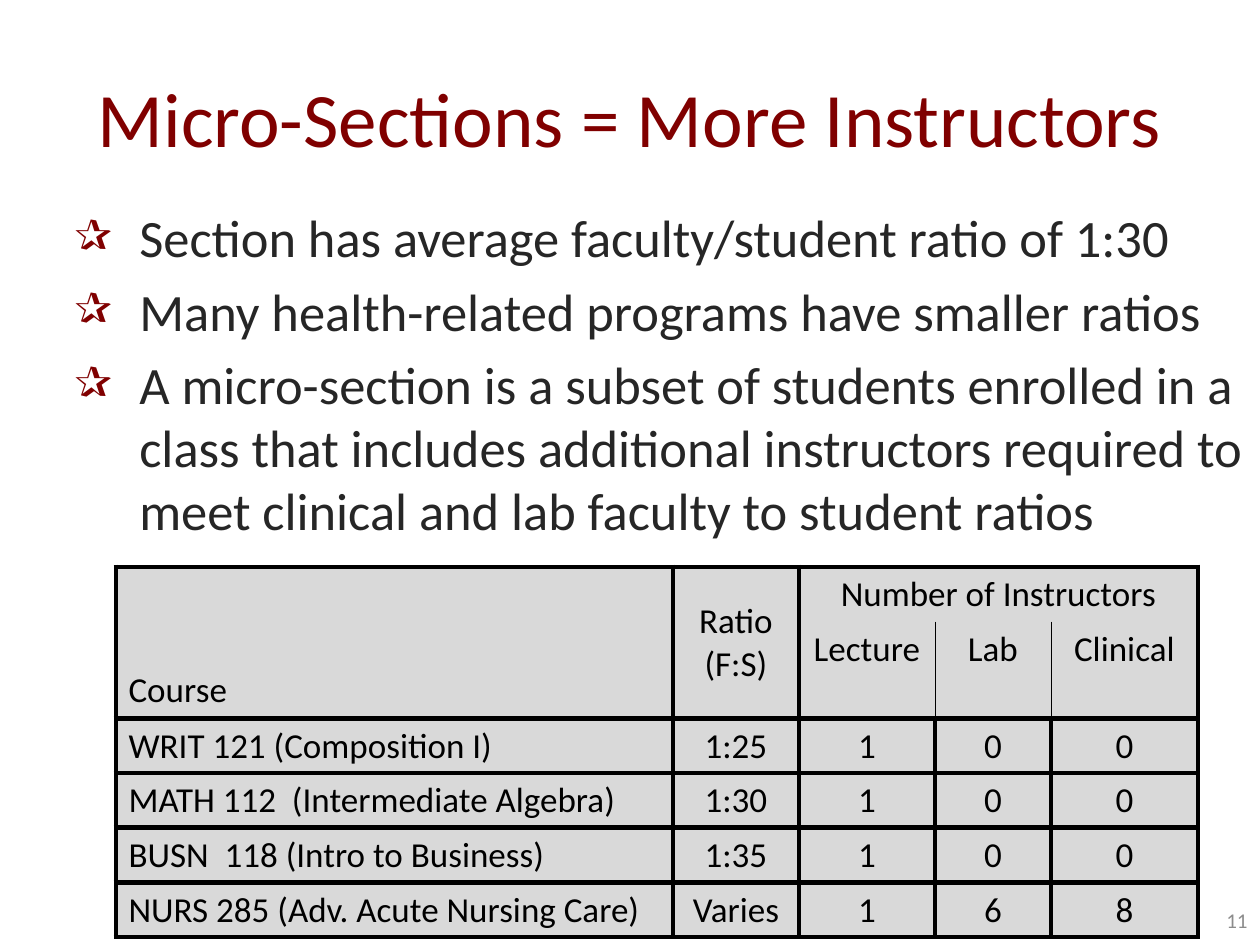
from lxml.etree import SubElement
from pptx import Presentation
from pptx.dml.color import RGBColor
from pptx.enum.text import MSO_ANCHOR as Anchor, PP_ALIGN as Align
from pptx.oxml.ns import qn
from pptx.util import Emu, Pt

PX_PER_INCH = 126
FONT = "Calibri"
MAROON, CHARCOAL, BLACK, GREY, CELL_GREY = "800000", "262626", "000000", "8C8C8C", "D9D9D9"
THICK, THIN = 3, 0.25

TITLE = "Micro-Sections = More Instructors"
POINTS = [
    "Section has average faculty/student ratio of 1:30",
    "Many health-related programs have smaller ratios",
    "A micro-section is a subset of students enrolled in a class that includes "
    "additional instructors required to meet clinical and lab faculty to student ratios",
]
COLUMN_WIDTHS = [557, 126, 136, 116, 147]
ROW_HEIGHT = 52
HEADER_ROWS, FIRST_COUNT_COL = 2, 2
COURSES = [
    ("WRIT 121 (Composition I)", "1:25", "1", "0", "0"),
    ("MATH 112  (Intermediate Algebra)", "1:30", "1", "0", "0"),
    ("BUSN  118 (Intro to Business)", "1:35", "1", "0", "0"),
    ("NURS 285 (Adv. Acute Nursing Care)", "Varies", "1", "6", "8"),
]


def px(length):
    return Emu(round(length * 914400 / PX_PER_INCH))


def color(hex_value):
    return RGBColor.from_string(hex_value)


def add_run(paragraph, text, size, hex_value):
    run = paragraph.add_run()
    run.text = text
    run.font.name = FONT
    run.font.size = Pt(size)
    run.font.color.rgb = color(hex_value)


def add_text_frame(slide, box, anchor):
    frame = slide.shapes.add_textbox(*map(px, box)).text_frame
    frame.word_wrap = True
    frame.vertical_anchor = anchor
    return frame


def add_line(slide, box, text, size, hex_value, align):
    """Place one vertically centred line of text in the box."""
    paragraph = add_text_frame(slide, box, Anchor.MIDDLE).paragraphs[0]
    paragraph.alignment = align
    add_run(paragraph, text, size, hex_value)


def add_star_bullet(paragraph, indent):
    properties = paragraph._p.get_or_add_pPr()
    properties.set("marL", str(px(indent)))
    properties.set("indent", str(-px(indent)))
    bullet_color = SubElement(properties, qn("a:buClr"))
    SubElement(bullet_color, qn("a:srgbClr"), val=MAROON)
    SubElement(properties, qn("a:buChar"), char="✰")


def add_points(slide, box):
    frame = add_text_frame(slide, box, Anchor.TOP)
    for index, point in enumerate(POINTS):
        paragraph = frame.add_paragraph() if index else frame.paragraphs[0]
        add_star_bullet(paragraph, indent=64)
        if index:
            paragraph.space_before = Pt(6)
        add_run(paragraph, point, 30, CHARCOAL)


def fill_cell(cell, text, align=Align.CENTER, anchor=Anchor.TOP):
    cell.vertical_anchor = anchor
    frame = cell.text_frame
    for index, line in enumerate(text.split("\n")):
        paragraph = frame.add_paragraph() if index else frame.paragraphs[0]
        paragraph.alignment = align
        add_run(paragraph, line, 20, BLACK)


def border_widths(row, col):
    """Widths in points by side; 0 means no line."""
    widths = dict.fromkeys("LRTB", THICK)
    if col >= FIRST_COUNT_COL:
        if row == 0:
            widths["B"] = 0
        elif row == 1:
            widths["T"] = 0
            if col > FIRST_COUNT_COL:
                widths["L"] = THIN
            if col < len(COLUMN_WIDTHS) - 1:
                widths["R"] = THIN
    return widths


def style_cell(cell, widths):
    properties = cell._tc.get_or_add_tcPr()
    for side, width in widths.items():
        line = SubElement(properties, qn(f"a:ln{side}"), w=str(Pt(width)))
        if width:
            solid = SubElement(line, qn("a:solidFill"))
            SubElement(solid, qn("a:srgbClr"), val=BLACK)
        else:
            SubElement(line, qn("a:noFill"))
    cell.fill.solid()
    cell.fill.fore_color.rgb = color(CELL_GREY)


def add_instructor_table(slide, left, top):
    row_count = HEADER_ROWS + len(COURSES)
    size = sum(COLUMN_WIDTHS), ROW_HEIGHT * row_count
    table = slide.shapes.add_table(
        row_count, len(COLUMN_WIDTHS), *map(px, (left, top, *size))).table
    table.first_row = table.horz_banding = False
    for column, width in zip(table.columns, COLUMN_WIDTHS):
        column.width = px(width)
    for row in range(row_count):
        table.rows[row].height = px(ROW_HEIGHT)
        for col in range(len(COLUMN_WIDTHS)):
            style_cell(table.cell(row, col), border_widths(row, col))

    for col in range(FIRST_COUNT_COL):
        table.cell(0, col).merge(table.cell(1, col))
    table.cell(0, FIRST_COUNT_COL).merge(table.cell(0, len(COLUMN_WIDTHS) - 1))

    fill_cell(table.cell(0, 0), "Course", Align.LEFT, Anchor.BOTTOM)
    fill_cell(table.cell(0, 1), "Ratio\n(F:S)", anchor=Anchor.MIDDLE)
    fill_cell(table.cell(0, FIRST_COUNT_COL), "Number of Instructors")
    for col, setting in enumerate(("Lecture", "Lab", "Clinical"), FIRST_COUNT_COL):
        fill_cell(table.cell(1, col), setting)
    for row, course in enumerate(COURSES, HEADER_ROWS):
        for col, value in enumerate(course):
            fill_cell(table.cell(row, col), value, Align.CENTER if col else Align.LEFT)


def main():
    deck = Presentation()
    deck.slide_width, deck.slide_height = px(1260), px(945)
    slide = deck.slides.add_slide(deck.slide_layouts[6])
    add_line(slide, (21, 38, 1218, 157), TITLE, 44, MAROON, Align.CENTER)
    add_points(slide, (63, 199, 1197, 368))
    add_line(slide, (1155, 895, 105, 50), "11", 12, GREY, Align.RIGHT)
    add_instructor_table(slide, 116, 567)
    deck.save("out.pptx")


if __name__ == "__main__":
    main()
